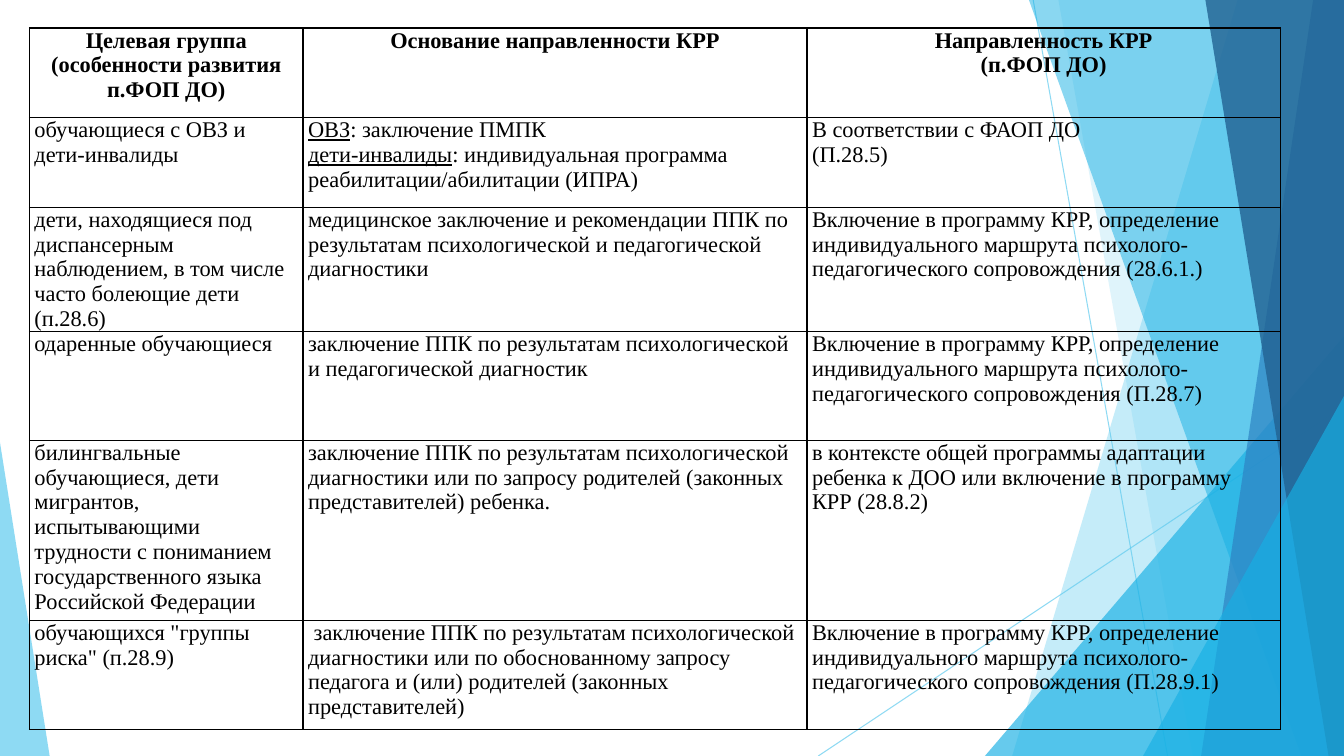
"""Build a slide with a table of target groups over a faceted blue backdrop."""
from dataclasses import astuple, dataclass
from typing import Union

from lxml.etree import SubElement
from pptx import Presentation
from pptx.dml.color import RGBColor
from pptx.enum.shapes import MSO_CONNECTOR, MSO_SHAPE
from pptx.enum.text import PP_ALIGN
from pptx.oxml.ns import qn
from pptx.shapes.autoshape import Shape
from pptx.shapes.connector import Connector
from pptx.shapes.shapetree import SlideShapes
from pptx.table import _Cell
from pptx.util import Pt

WIDTH, HEIGHT = 960, 540
FONT = "Times New Roman"
BLACK, SKY, CYAN, BLUE, NAVY = "000000", "5FCBEF", "17B0E4", "2E83C3", "226292"


@dataclass
class Ray:
    start: tuple[float, float]
    end: tuple[float, float]


@dataclass
class Band:
    top_left: float
    bottom_left: float
    color: str
    opacity: int


@dataclass
class Wedge:
    left: float
    top: float
    width: float
    apex: float
    color: str
    opacity: int


@dataclass
class TableRow:
    group: str
    basis: str
    direction: str


RAYS = [Ray((738, 0), (834, HEIGHT)), Ray((WIDTH, 290), (584.5, HEIGHT))]
FACETS = [
    Band(884, 723, SKY, 36),
    Band(756, 852, SKY, 20),
    Wedge(703.5, 240, 256.5, 1, CYAN, 66),
    Band(735, 929.5, CYAN, 50),
    Band(938, 858, BLUE, 70),
    Band(861, 949, NAVY, 80),
    Wedge(816.5, 283, 143.5, 1, CYAN, 66),
    Wedge(0, 316, 35.5, 0, SKY, 70),
]

ROUTE = ("Включение в программу КРР, определение индивидуального маршрута "
         "психолого-педагогического сопровождения")
COLUMN_WIDTHS = [195.5, 360, 338]
ROW_HEIGHTS = [64, 64, 89, 77.5, 128.5, 78]
ROWS = [
    TableRow("Целевая группа (особенности развития п.ФОП ДО)",
             "Основание направленности КРР",
             "Направленность КРР\n(п.ФОП ДО)"),
    TableRow("обучающиеся с ОВЗ и дети-инвалиды",
             "_ОВЗ_: заключение ПМПК\n_дети-инвалиды_: индивидуальная программа "
             "реабилитации/абилитации (ИПРА)",
             "В соответствии с ФАОП ДО\n(П.28.5)"),
    TableRow("дети, находящиеся под диспансерным наблюдением, в том числе "
             "часто болеющие дети (п.28.6)",
             "медицинское заключение и рекомендации ППК по результатам "
             "психологической и педагогической диагностики",
             f"{ROUTE} (28.6.1.)"),
    TableRow("одаренные обучающиеся",
             "заключение ППК по результатам психологической и педагогической диагностик",
             f"{ROUTE} (П.28.7)"),
    TableRow("билингвальные обучающиеся, дети мигрантов, испытывающими трудности "
             "с пониманием государственного языка Российской Федерации",
             "заключение ППК по результатам психологической диагностики или "
             "по запросу родителей (законных представителей) ребенка.",
             "в контексте общей программы адаптации ребенка к ДОО "
             "или включение в программу КРР (28.8.2)"),
    TableRow('обучающихся "группы риска" (п.28.9)',
             " заключение ППК по результатам психологической диагностики или "
             "по обоснованному запросу педагога и (или) родителей "
             "(законных представителей)",
             f"{ROUTE} (П.28.9.1)"),
]


def rgb(color: str) -> RGBColor:
    """Turn a hex string into a colour."""
    return RGBColor.from_string(color)


def set_opacity(item: Union[Shape, Connector], percent: int) -> None:
    """Make the colours of a shape or connector partly transparent."""
    for color in item._element.spPr.iter(qn("a:srgbClr")):
        SubElement(color, qn("a:alpha"), val=str(percent * 1000))


def draw_ray(shapes: SlideShapes, ray: Ray) -> None:
    """Draw one thin line of the backdrop."""
    ends = [Pt(value) for value in (*ray.start, *ray.end)]
    line = shapes.add_connector(MSO_CONNECTOR.STRAIGHT, *ends)
    line.line.color.rgb = rgb(SKY)
    line.line.width = Pt(0.75)
    set_opacity(line, 70)
    SubElement(line._element.spPr, qn("a:effectLst"))


def draw_facet(shapes: SlideShapes, facet: Union[Band, Wedge]) -> None:
    """Draw one translucent facet of the backdrop."""
    if isinstance(facet, Band):
        outline = shapes.build_freeform(Pt(facet.top_left), 0)
        corners = [(WIDTH, 0), (WIDTH, HEIGHT), (facet.bottom_left, HEIGHT)]
        outline.add_line_segments([(Pt(x), Pt(y)) for x, y in corners])
        shape = outline.convert_to_shape()
    else:
        shape = shapes.add_shape(MSO_SHAPE.ISOSCELES_TRIANGLE, Pt(facet.left),
                                 Pt(facet.top), Pt(facet.width),
                                 Pt(HEIGHT - facet.top))
        shape.adjustments[0] = facet.apex
    shape.shadow.inherit = False
    shape.fill.solid()
    shape.fill.fore_color.rgb = rgb(facet.color)
    shape.line.fill.background()
    set_opacity(shape, facet.opacity)


def add_borders(cell: _Cell) -> None:
    """Give a cell a black line on every side."""
    properties = cell._tc.get_or_add_tcPr()
    for index, side in enumerate(("lnL", "lnR", "lnT", "lnB")):
        border = properties.makeelement(qn(f"a:{side}"), {"w": str(Pt(1))})
        properties.insert(index, border)
        fill = SubElement(border, qn("a:solidFill"))
        SubElement(fill, qn("a:srgbClr"), val=BLACK)


def fill_cell(cell: _Cell, text: str, is_header: bool) -> None:
    """Write a cell, underlining what stands between underscores."""
    cell.margin_left = cell.margin_right = Pt(3.6)
    cell.margin_top = cell.margin_bottom = 0
    cell.fill.background()
    add_borders(cell)
    frame = cell.text_frame
    for number, line in enumerate(text.split("\n")):
        paragraph = frame.add_paragraph() if number else frame.paragraphs[0]
        paragraph.alignment = PP_ALIGN.CENTER if is_header else PP_ALIGN.LEFT
        for index, part in enumerate(line.split("_")):
            if part:
                run = paragraph.add_run()
                run.text = part
                run.font.name = FONT
                run.font.size = Pt(16)
                run.font.bold = is_header
                run.font.underline = index % 2 == 1
                run.font.color.rgb = rgb(BLACK)


def draw_table(shapes: SlideShapes) -> None:
    """Draw the table of target groups."""
    table = shapes.add_table(len(ROWS), len(COLUMN_WIDTHS), Pt(21), Pt(20),
                             Pt(sum(COLUMN_WIDTHS)), Pt(sum(ROW_HEIGHTS))).table
    table.first_row = table.horz_banding = False
    for column, width in zip(table.columns, COLUMN_WIDTHS):
        column.width = Pt(width)
    for number, (row, height) in enumerate(zip(ROWS, ROW_HEIGHTS)):
        table.rows[number].height = Pt(height)
        for column_number, text in enumerate(astuple(row)):
            fill_cell(table.cell(number, column_number), text, number == 0)


def main() -> None:
    """Build and save the presentation."""
    deck = Presentation()
    deck.slide_width, deck.slide_height = Pt(WIDTH), Pt(HEIGHT)
    shapes = deck.slides.add_slide(deck.slide_layouts[6]).shapes
    for ray in RAYS:
        draw_ray(shapes, ray)
    for facet in FACETS:
        draw_facet(shapes, facet)
    draw_table(shapes)
    deck.save("out.pptx")


if __name__ == "__main__":
    main()
